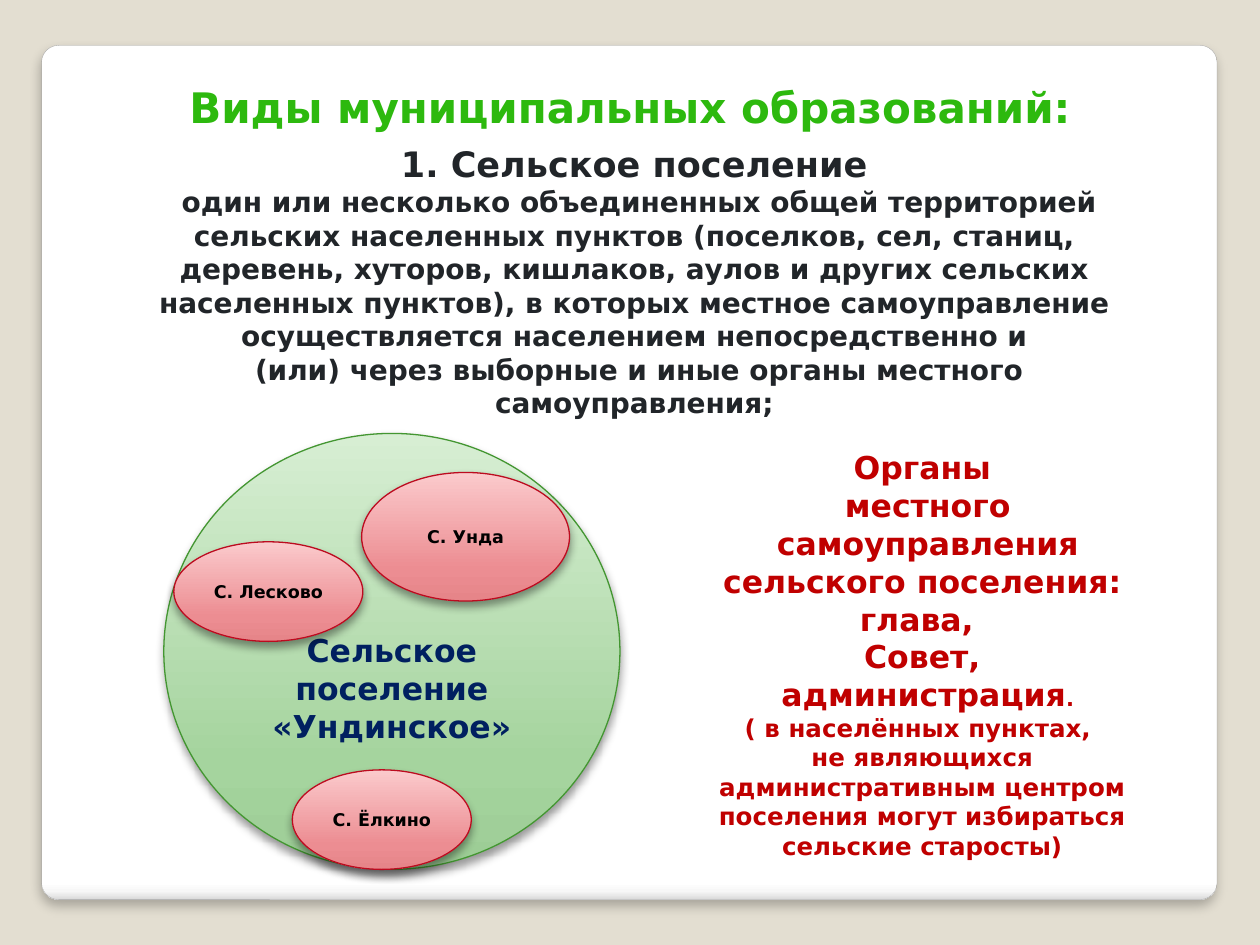
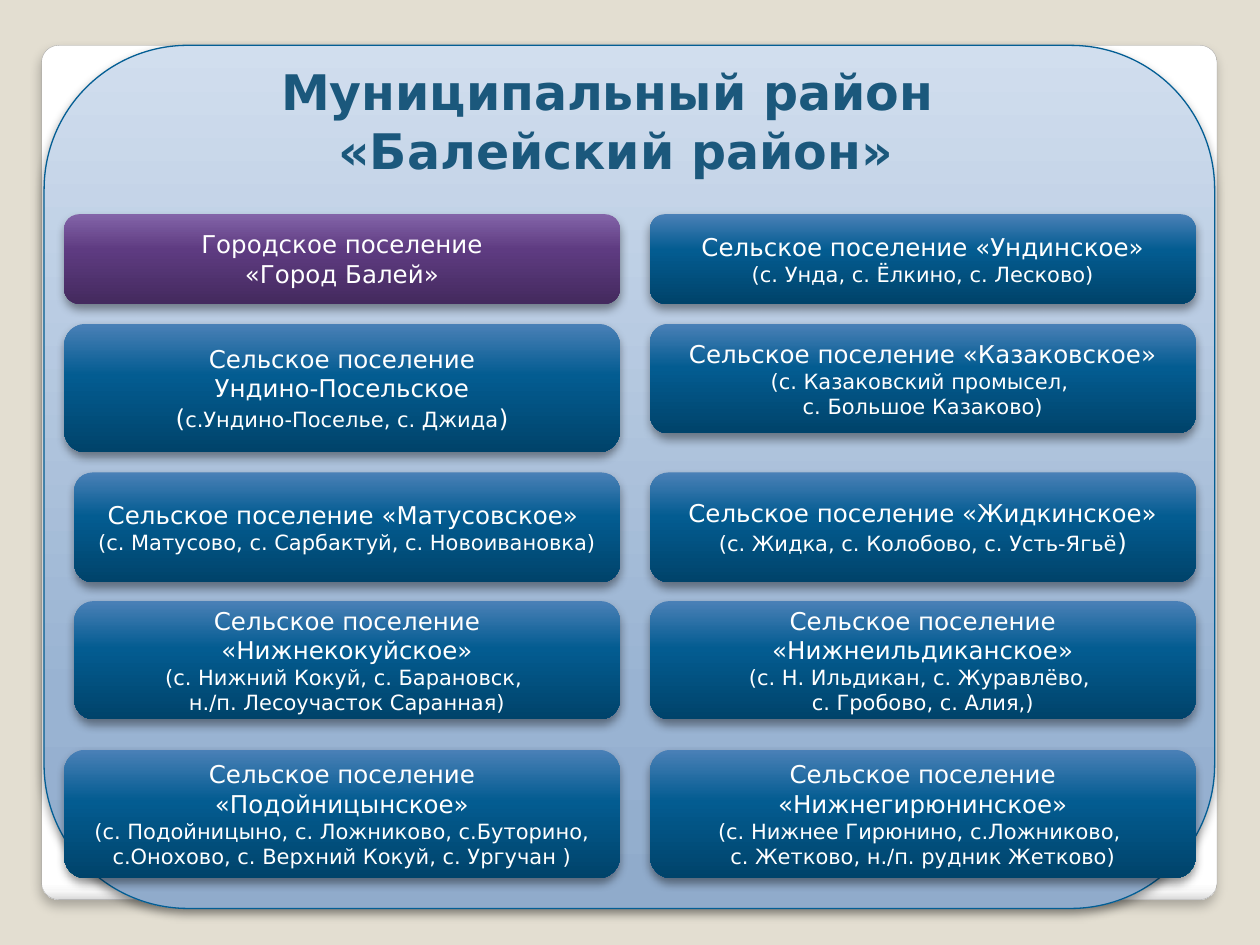
"""Builds two slides on the kinds of municipalities and the settlements of one district."""
from dataclasses import dataclass

import pptx
import pptx.dml.color
import pptx.enum.shapes
import pptx.enum.text
import pptx.oxml.ns
import pptx.util
from lxml import etree

Inches = pptx.util.Inches
Pt = pptx.util.Pt
Shape = pptx.enum.shapes.MSO_SHAPE
Anchor = pptx.enum.text.MSO_ANCHOR


@dataclass(frozen=True)
class Theme:
    font: str = "DejaVu Sans"
    backdrop: str = "E3DED1"
    panel: tuple = ((0, "FFFFFF"), (98, "FFFFFF"), (99, "F7F7F7"), (100, "DADADA"))
    panel_line: str = "A4A4A4"
    green: tuple = ((0, "D7EED3"), (75, "A5D49E"), (100, "9DCD96"))
    green_line: str = "439631"
    red: tuple = ((0, "FBCACC"), (75, "EC8D92"), (100, "E68589"))
    red_line: str = "BC0B1F"
    sky: tuple = ((0, "D1DEEE"), (75, "99B3D2"), (100, "90ABCB"))
    sky_line: str = "035E94"
    blue: tuple = ((0, "4A80B7"), (40, "035C91"), (100, "00436A"))
    purple: tuple = ((0, "8364A8"), (40, "5E3B81"), (100, "442A5E"))
    heading: str = "2DB90E"
    district: str = "1B587C"
    body: str = "212529"
    accent: str = "C00000"
    navy: str = "002060"
    black: str = "000000"
    white: str = "FFFFFF"
    panel_shadow: tuple = (25, 6, 4)
    shape_shadow: tuple = (40, 5.2, 3)
    huge: int = 28
    title: int = 24
    subtitle: int = 20
    large: int = 18
    text: int = 16
    medium: int = 14
    small: int = 12
    tiny: int = 10


THEME = Theme()


def rgb(value):
    return pptx.dml.color.RGBColor.from_string(value)


class Builder:
    def __init__(self, theme):
        self.theme = theme
        self.deck = pptx.Presentation()
        self.deck.slide_width = Inches(10)
        self.deck.slide_height = Inches(7.5)
        self.page = None

    def add_page(self):
        self.page = self.deck.slides.add_slide(self.deck.slide_layouts[6])
        self.page.background.fill.solid()
        self.page.background.fill.fore_color.rgb = rgb(self.theme.backdrop)
        panel = self.shape(Shape.ROUNDED_RECTANGLE, (0.33, 0.36, 9.33, 6.78), self.theme.panel,
                           self.theme.panel_line, 0.16, self.theme.panel_shadow)
        panel.adjustments[0] = 0.02

    def shape(self, kind, place, stops, line=None, width=0.75, shadow=None):
        shape = self.page.shapes.add_shape(kind, *map(Inches, place))
        self.gradient(shape, stops)
        if line:
            shape.line.color.rgb = rgb(line)
            shape.line.width = Pt(width)
        else:
            shape.line.fill.background()
        self.shadow(shape, *(shadow or self.theme.shape_shadow))
        return shape

    def child(self, parent, tag, **values):
        names = {name: str(value) for name, value in values.items()}
        return etree.SubElement(parent, pptx.oxml.ns.qn(tag), names)

    def gradient(self, shape, stops):
        shape.fill.gradient()
        shape.fill.gradient_angle = 270
        stop_list = shape._element.spPr.find(".//" + pptx.oxml.ns.qn("a:gsLst"))
        for old in list(stop_list):
            stop_list.remove(old)
        for percent, color in stops:
            stop = self.child(stop_list, "a:gs", pos=percent * 1000)
            self.child(stop, "a:srgbClr", val=color)

    def shadow(self, shape, opacity, blur, distance):
        shape.shadow.inherit = False
        effects = shape._element.spPr.find(pptx.oxml.ns.qn("a:effectLst"))
        outer = self.child(effects, "a:outerShdw", blurRad=int(Pt(blur)), dist=int(Pt(distance)),
                           dir=90 * 60000, rotWithShape=0)
        color = self.child(outer, "a:srgbClr", val=self.theme.black)
        self.child(color, "a:alpha", val=opacity * 1000)

    def fill_text(self, shape, paragraphs, color, bold=False, anchor=Anchor.MIDDLE):
        frame = shape.text_frame
        frame.word_wrap = True
        frame.vertical_anchor = anchor
        for index, spans in enumerate(paragraphs):
            para = frame.add_paragraph() if index else frame.paragraphs[0]
            para.alignment = pptx.enum.text.PP_ALIGN.CENTER
            for text, size in spans:
                span = para.add_run()
                span.text = text
                span.font.name = self.theme.font
                span.font.size = Pt(size)
                span.font.bold = bold
                span.font.color.rgb = rgb(color)

    def text(self, place, paragraphs, color, anchor=Anchor.TOP):
        box = self.page.shapes.add_textbox(*map(Inches, place))
        self.fill_text(box, paragraphs, color, True, anchor)
        box.text_frame.auto_size = pptx.enum.text.MSO_AUTO_SIZE.SHAPE_TO_FIT_TEXT

    def ellipse(self, place, stops, line, label, size, color, top_inset=0.05):
        shape = self.shape(Shape.OVAL, place, stops, line)
        self.fill_text(shape, lines(size, label), color, True)
        shape.text_frame.margin_top = Inches(top_inset)

    def card(self, place, paragraphs, stops):
        shape = self.shape(Shape.ROUNDED_RECTANGLE, place, stops)
        self.fill_text(shape, paragraphs, self.theme.white)


def lines(size, *texts):
    return [[(text, size)] for text in texts]


def settlement(names, villages=()):
    return lines(THEME.medium, *names) + lines(THEME.small, *villages)


def build_rural_settlement(builder):
    theme = builder.theme
    builder.add_page()
    builder.text((1.14, 0.6, 7.72, 0.5),
                 lines(theme.title, "Виды муниципальных образований:"), theme.heading)
    builder.ellipse((1.3, 3.44, 3.62, 3.46), theme.green, theme.green_line,
                    "Сельское поселение «Ундинское»", theme.large, theme.navy, top_inset=0.63)
    villages = [
        ("С. Лесково", (1.38, 4.3, 1.5, 0.79)),
        ("С. Унда", (2.87, 3.75, 1.65, 1.02)),
        ("С. Ёлкино", (2.32, 6.11, 1.42, 0.79)),
    ]
    for name, place in villages:
        builder.ellipse(place, theme.red, theme.red_line, name, theme.tiny, theme.black)
    authorities = lines(theme.large, "Органы", " местного", " самоуправления сельского поселения:",
                        "глава, ", "Совет,")
    authorities.append([(" администрация", theme.large), (".", theme.small)])
    authorities += lines(theme.medium, "( в населённых пунктах, ",
                         "не являющихся административным центром поселения "
                         "могут избираться сельские старосты)")
    builder.text((5.55, 3.51, 3.54, 3.4), authorities, theme.accent)
    definition = lines(theme.subtitle, "1. Сельское поселение") + lines(
        theme.text,
        " один или несколько объединенных общей территорией сельских населенных пунктов "
        "(поселков, сел, станиц, деревень, хуторов, кишлаков, аулов и других сельских "
        "населенных пунктов), в которых местное самоуправление осуществляется населением "
        "непосредственно и",
        " (или) через выборные и иные органы местного самоуправления;")
    builder.text((0.83, 1.07, 8.41, 2.32), definition, theme.body, Anchor.MIDDLE)


def build_district(builder):
    theme = builder.theme
    builder.add_page()
    builder.shape(Shape.ROUNDED_RECTANGLE, (0.35, 0.36, 9.29, 6.85), theme.sky, theme.sky_line)
    builder.text((1.54, 0.44, 6.69, 1.04),
                 lines(theme.huge, "Муниципальный район ", "«Балейский район»"), theme.district)
    rural = "Сельское поселение"
    undino = settlement([rural, "Ундино-Посельское"])
    undino.append([("(", theme.medium), ("с.Ундино-Поселье, с. Джида", theme.small),
                   (")", theme.medium)])
    zhidka = settlement([f"{rural} «Жидкинское»"])
    zhidka.append([("(с. Жидка, с. Колобово, с. Усть-Ягьё", theme.small), (")", theme.medium)])
    left_cards = [
        (0.51, 0.71, settlement(["Городское поселение", "«Город Балей»"])),
        (0.51, 1.02, undino),
        (0.59, 0.87, settlement([f"{rural} «Матусовское» "],
                                ["(с. Матусово, с. Сарбактуй, с. Новоивановка)"])),
        (0.59, 0.94, settlement([rural, "«Нижнекокуйское»"],
                                ["(с. Нижний Кокуй, с. Барановск, ",
                                 "н./п. Лесоучасток Саранная)"])),
        (0.51, 1.02, settlement([rural, "«Подойницынское»"],
                                ["(с. Подойницыно, с. Ложниково, с.Буторино, "
                                 "с.Онохово, с. Верхний Кокуй, с. Ургучан )"])),
    ]
    right_cards = [
        (0.71, settlement([f"{rural} «Ундинское»"], ["(с. Унда, с. Ёлкино, с. Лесково)"])),
        (0.87, settlement([f"{rural} «Казаковское»"],
                          ["(с. Казаковский промысел, ", "с. Большое Казаково)"])),
        (0.87, zhidka),
        (0.94, settlement([f"{rural} «Нижнеильдиканское»"],
                          ["(с. Н. Ильдикан, с. Журавлёво, ", "с. Гробово, с. Алия,)"])),
        (1.02, settlement([rural, "«Нижнегирюнинское»"],
                          ["(с. Нижнее Гирюнино, с.Ложниково, ",
                           "с. Жетково, н./п. рудник Жетково)"])),
    ]
    row_tops = (1.7, 2.57, 3.75, 4.77, 5.95)
    left_edge, right_start, right_width = 4.92, 5.16, 4.33
    for row, (top, left_card, right_card) in enumerate(zip(row_tops, left_cards, right_cards)):
        start, height, paragraphs = left_card
        builder.card((start, top, left_edge - start, height), paragraphs,
                     theme.blue if row else theme.purple)
        height, paragraphs = right_card
        builder.card((right_start, top, right_width, height), paragraphs, theme.blue)


def main():
    builder = Builder(THEME)
    build_rural_settlement(builder)
    build_district(builder)
    builder.deck.save("out.pptx")


if __name__ == "__main__":
    main()
